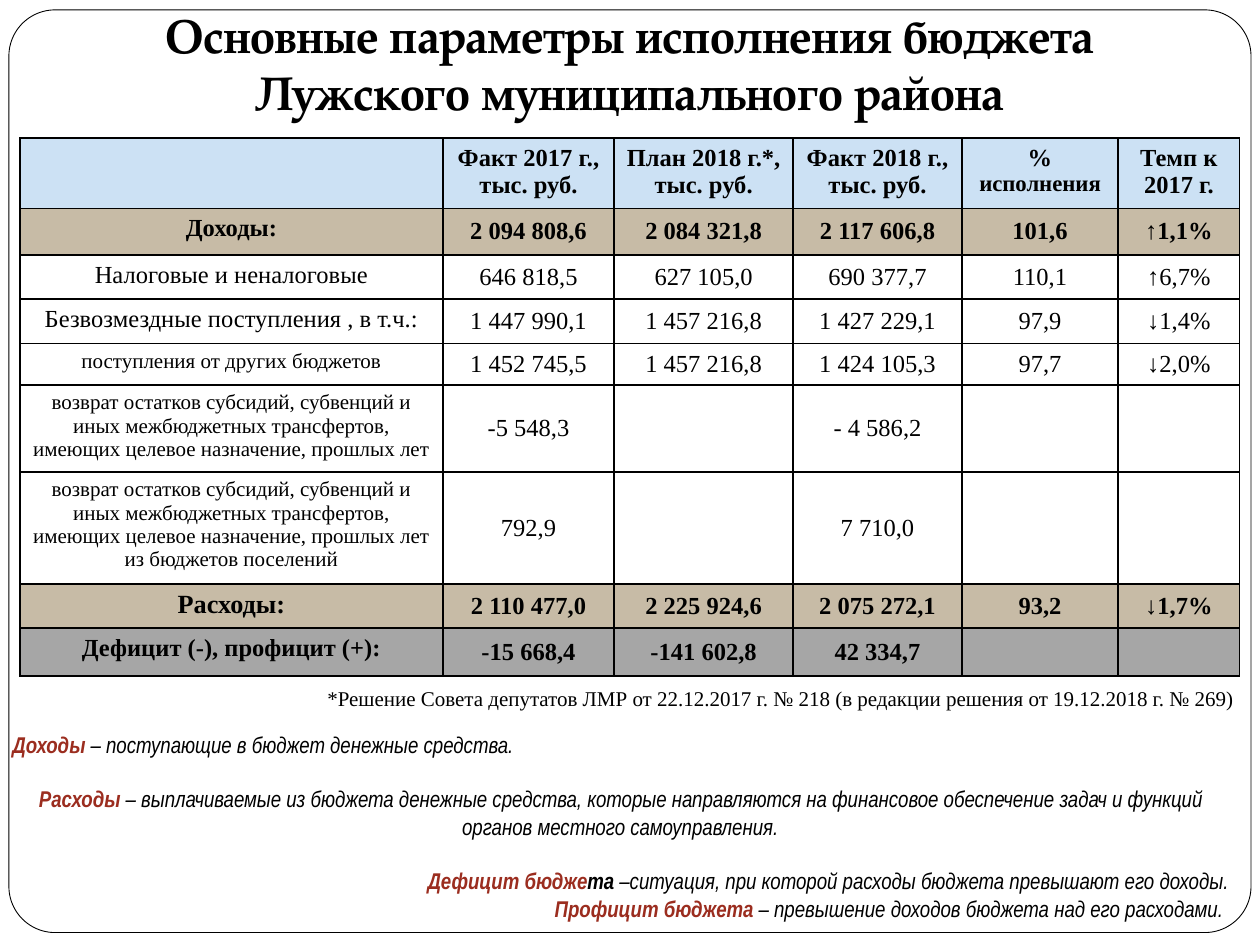
from dataclasses import dataclass

from lxml.etree import SubElement
from pptx import Presentation
from pptx.dml.color import RGBColor
from pptx.enum.shapes import MSO_SHAPE
from pptx.enum.text import MSO_ANCHOR, MSO_AUTO_SIZE, PP_ALIGN
from pptx.oxml.ns import qn
from pptx.util import Cm, Pt


@dataclass(frozen=True)
class Theme:
    ink: str = "000000"
    paper: str = "FFFFFF"
    accent: str = "9B2D1F"
    header: str = "CCE1F4"
    total: str = "C7BBA6"
    balance: str = "A6A6A6"
    title_font: str = "TeX Gyre Pagella"
    table_font: str = "Times New Roman"
    note_font: str = "Arial Narrow"
    title: int = 27
    strong: int = 15
    body: int = 14
    term: int = 13
    small: int = 12
    gap: float = 15.6


@dataclass(frozen=True)
class Box:
    x: float
    y: float
    w: float
    h: float

    def emu(self):
        return Cm(self.x), Cm(self.y), Cm(self.w), Cm(self.h)


@dataclass(frozen=True)
class Row:
    height: float
    fill: str
    cells: tuple
    bold: bool = False
    label_size: int = 14
    anchor: MSO_ANCHOR = MSO_ANCHOR.MIDDLE


T = Theme()

COLUMNS = (8.53, 3.45, 3.61, 3.4, 3.15, 2.45)
REFUND = ("возврат остатков субсидий, субвенций и иных межбюджетных трансфертов, "
          "имеющих целевое назначение, прошлых лет")
ROWS = (
    Row(1.42, T.header,
        ("", "Факт 2017 г.,\nтыс. руб.", "План 2018 г.*, тыс. руб.", "Факт 2018 г., тыс. руб.",
         (("% ", {}), ("исполнения", {"size": T.term})), "Темп к 2017 г."),
        bold=True, anchor=MSO_ANCHOR.TOP),
    Row(0.94, T.total,
        ("Доходы:", "2 094 808,6", "2 084 321,8", "2 117 606,8", "101,6", "↑1,1%"), bold=True),
    Row(0.89, T.paper,
        ("Налоговые и неналоговые", "646 818,5", "627 105,0", "690 377,7", "110,1", "↑6,7%")),
    Row(0.89, T.paper,
        ("Безвозмездные поступления , в т.ч.:", "1 447 990,1", "1 457 216,8", "1 427 229,1",
         "97,9", "↓1,4%")),
    Row(0.84, T.paper,
        ("поступления от других бюджетов", "1 452 745,5", "1 457 216,8", "1 424 105,3",
         "97,7", "↓2,0%"), label_size=T.small),
    Row(1.75, T.paper, (REFUND, "-5 548,3", "", "- 4 586,2", "", ""), label_size=T.small),
    Row(2.26, T.paper,
        (REFUND + " из бюджетов поселений", "792,9", "", "7 710,0", "", ""),
        label_size=T.small),
    Row(0.89, T.total,
        ("Расходы:", "2 110 477,0", "2 225 924,6", "2 075 272,1", "93,2",
         (("↓", {"bold": False}), ("1,7%", {}))), bold=True, label_size=T.strong),
    Row(0.97, T.balance,
        ("Дефицит (-), профицит (+):", "-15 668,4", "-141 602,8", "42 334,7", "", ""), bold=True),
)

TERM = {"bold": True, "color": T.accent}
DEFINITIONS = (
    (PP_ALIGN.LEFT, 0,
     (("Доходы ", TERM), ("– поступающие в бюджет денежные средства.", {}))),
    (PP_ALIGN.CENTER, T.gap,
     (("Расходы ", TERM),
      ("– выплачиваемые из бюджета денежные средства, которые направляются на финансовое "
       "обеспечение задач и функций органов местного самоуправления.", {}))),
    (PP_ALIGN.RIGHT, T.gap,
     (("Дефицит бюдже", TERM), ("та", {"bold": True}),
      (" –ситуация, при которой расходы бюджета превышают его доходы.", {}))),
    (PP_ALIGN.RIGHT, 0,
     (("Профицит бюджета ", TERM), ("– превышение доходов бюджета над его расходами. ", {}))),
)


def set_font(font, name=None, size=None, bold=None, italic=None, color=None):
    if name:
        font.name = name
    if size:
        font.size = Pt(size)
    if bold is not None:
        font.bold = bold
    if italic is not None:
        font.italic = italic
    if color:
        font.color.rgb = RGBColor.from_string(color)


def write(p, content, align, **style):
    p.alignment = align
    set_font(p.font, **style)
    for text, change in ([(content, {})] if isinstance(content, str) else content):
        if text:
            r = p.add_run()
            r.text = text
            set_font(r.font, **change)


def write_lines(tf, lines, align, **style):
    for i, line in enumerate(lines):
        p = tf.paragraphs[0] if i == 0 else tf.add_paragraph()
        write(p, line, align, **style)


def set_borders(cell, color, width):
    tc_pr = cell._tc.get_or_add_tcPr()
    for side in ("lnL", "lnR", "lnT", "lnB"):
        ln = SubElement(tc_pr, qn(f"a:{side}"), w=str(Pt(width)))
        SubElement(SubElement(ln, qn("a:solidFill")), qn("a:srgbClr"), val=color)


def add_frame(s, box):
    sp = s.shapes.add_shape(MSO_SHAPE.ROUNDED_RECTANGLE, *box.emu())
    sp.adjustments[0] = 0.05
    sp.shadow.inherit = False
    sp.fill.solid()
    sp.fill.fore_color.rgb = RGBColor.from_string(T.paper)
    sp.line.color.rgb = RGBColor.from_string(T.ink)
    sp.line.width = Pt(0.5)


def add_title(s, box):
    sp = s.shapes.title
    sp.left, sp.top, sp.width, sp.height = box.emu()
    tf = sp.text_frame
    tf.word_wrap = True
    tf.auto_size = MSO_AUTO_SIZE.NONE
    tf.vertical_anchor = MSO_ANCHOR.TOP
    lines = ("Основные параметры исполнения бюджета", "Лужского муниципального района")
    write_lines(tf, lines, PP_ALIGN.CENTER,
                name=T.title_font, size=T.title, bold=True, color=T.ink)


def add_budget_table(s, box):
    table = s.shapes.add_table(len(ROWS), len(COLUMNS), *box.emu()).table
    table.first_row = table.horz_banding = False
    for column, width in zip(table.columns, COLUMNS):
        column.width = Cm(width)
    for i, row in enumerate(ROWS):
        table.rows[i].height = Cm(row.height)
        for j, content in enumerate(row.cells):
            cell = table.cell(i, j)
            set_borders(cell, T.ink, 1)
            cell.fill.solid()
            cell.fill.fore_color.rgb = RGBColor.from_string(row.fill)
            cell.vertical_anchor = row.anchor if j else MSO_ANCHOR.TOP
            lines = content.split("\n") if isinstance(content, str) else [content]
            write_lines(cell.text_frame, lines, PP_ALIGN.CENTER, name=T.table_font,
                        size=T.body if j else row.label_size, bold=row.bold, color=T.ink)


def add_footnote(s, box):
    tf = s.shapes.add_textbox(*box.emu()).text_frame
    tf.word_wrap = False
    write(tf.paragraphs[0],
          "*Решение Совета депутатов ЛМР от 22.12.2017 г. № 218 "
          "(в редакции решения от 19.12.2018 г. № 269)",
          PP_ALIGN.LEFT, name=T.table_font, size=T.small, color=T.ink)


def add_definitions(s, box):
    tf = s.shapes.add_textbox(*box.emu()).text_frame
    tf.word_wrap = True
    for i, (align, gap, runs) in enumerate(DEFINITIONS):
        p = tf.paragraphs[0] if i == 0 else tf.add_paragraph()
        p.space_before = Pt(gap)
        write(p, runs, align, name=T.note_font, size=T.term, italic=True, color=T.ink)


def main():
    prs = Presentation()
    prs.slide_width, prs.slide_height = Cm(25.4), Cm(19.05)
    s = prs.slides.add_slide(prs.slide_layouts[5])
    add_frame(s, Box(0.18, 0.2, 25.04, 18.6))
    s.shapes._spTree.append(s.shapes.title._element)
    add_title(s, Box(0.4, 0, 24.6, 2.64))
    add_budget_table(s, Box(0.4, 2.78, sum(COLUMNS), sum(row.height for row in ROWS)))
    add_definitions(s, Box(0, 14.6, 25, 4.14))
    add_footnote(s, Box(6.35, 13.7, 18.85, 0.98))
    prs.save("out.pptx")


if __name__ == "__main__":
    main()
